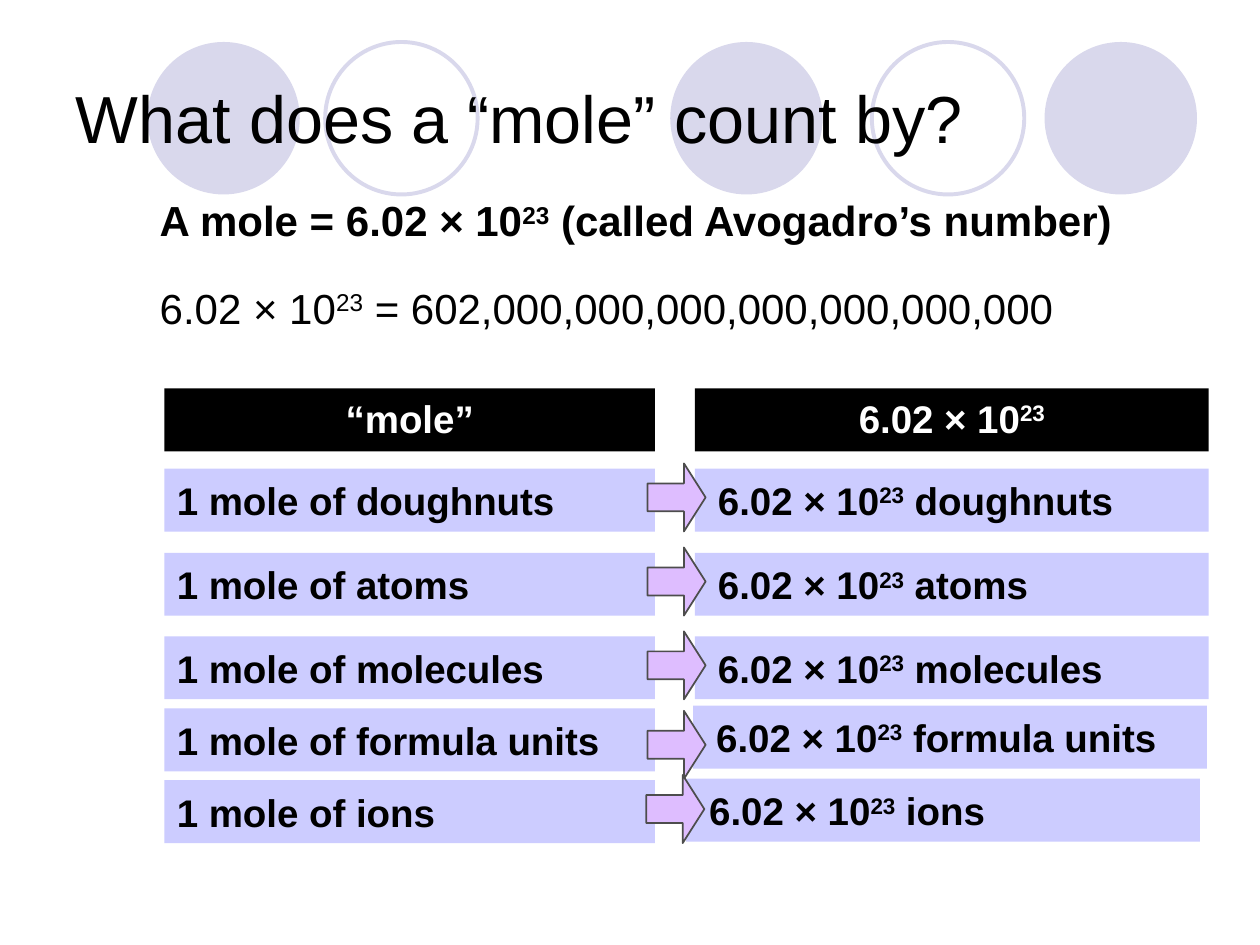
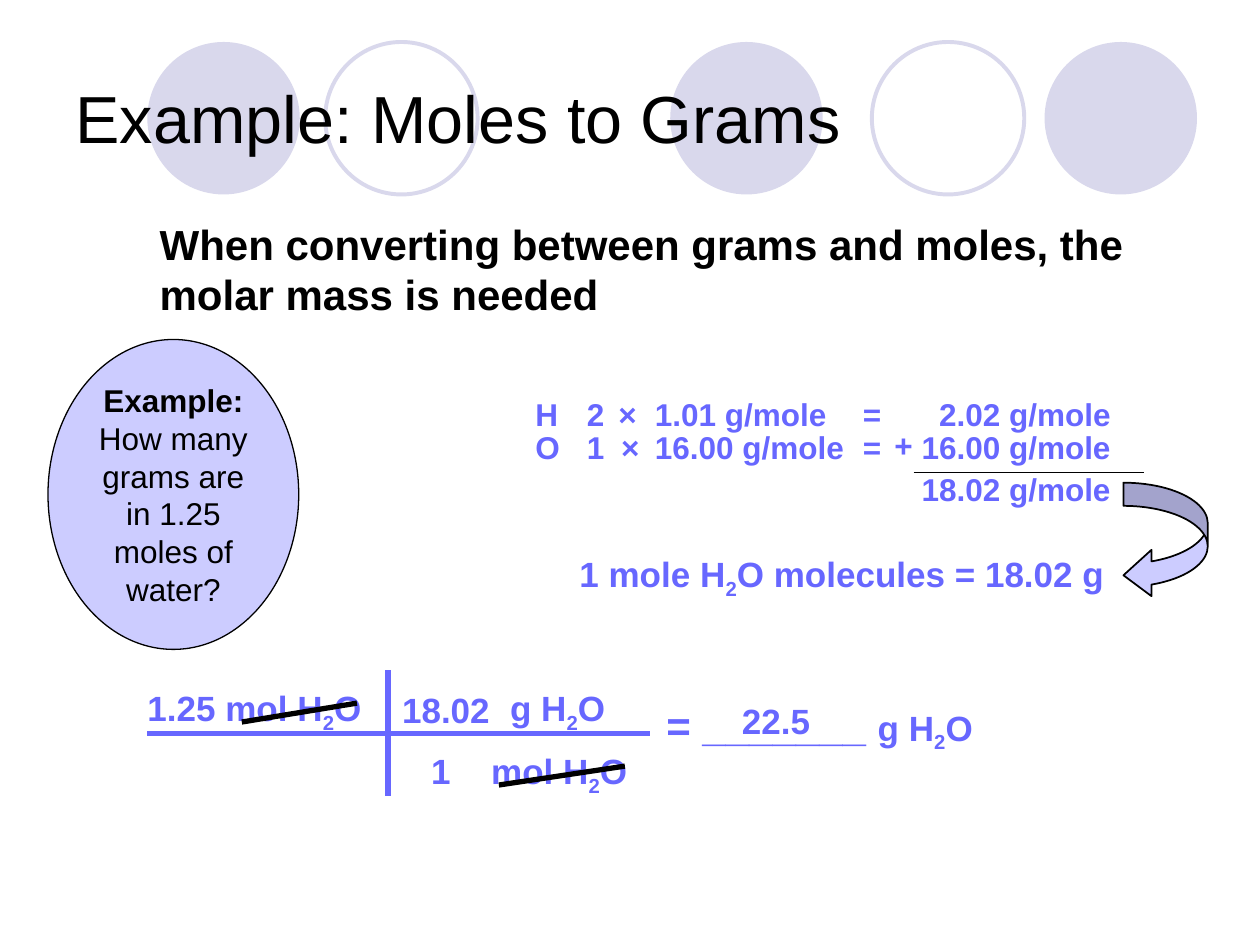
from lxml import etree
from pptx import Presentation
from pptx.dml.color import RGBColor
from pptx.enum.shapes import MSO_CONNECTOR, MSO_SHAPE as SHAPE
from pptx.enum.text import MSO_ANCHOR as ANCHOR, MSO_AUTO_SIZE as FIT, PP_ALIGN as ALIGN
from pptx.oxml.ns import qn
from pptx.util import Pt

FONT = "Arial"
BLACK, WHITE = "000000", "FFFFFF"
CIRCLE, LILAC, PINK, GREY, VIOLET = "D9D8EC", "CCCCFF", "DEBDFF", "4D4D4D", "6767FF"

# Superscript and subscript pieces
EXP = ("23", {"baseline": 30})
TWO = ("2", {"baseline": -25})
AVOGADRO = ["6.02 × 10", EXP]
WATER = ["H", TWO, "O"]


def rgb(hex_color):
    return RGBColor.from_string(hex_color)


def write(p, pieces, size, color=BLACK, bold=False, align=ALIGN.LEFT):
    """Fill a paragraph; a piece is a string or a (string, overrides) pair."""
    p.alignment = align
    for piece in pieces:
        text, extra = (piece, {}) if isinstance(piece, str) else piece
        r = p.add_run()
        r.text = text
        fmt = {"name": FONT, "bold": bold, "size": Pt(extra.get("size", size))}
        for key, value in fmt.items():
            setattr(r.font, key, value)
        r.font.color.rgb = rgb(color)
        if "baseline" in extra:
            r._r.get_or_add_rPr().set("baseline", str(extra["baseline"] * 1000))


def format_frame(tf, **fmt):
    for key, value in fmt.items():
        setattr(tf, key, value)


def add_text(s, x, y, w, h, pieces, size, wrap=False, **fmt):
    tf = s.shapes.add_textbox(Pt(x), Pt(y), Pt(w), Pt(h)).text_frame
    format_frame(tf, word_wrap=wrap, auto_size=FIT.SHAPE_TO_FIT_TEXT)
    write(tf.paragraphs[0], pieces, size, **fmt)


def add_statement(s, y, h, pieces, bold=True):
    add_text(s, 84.2, y, 604, h, pieces, 24, wrap=True, bold=bold)


def add_violet(s, x, y, w, pieces, size=20, align=ALIGN.LEFT):
    add_text(s, x, y, w, size * 1.2 + 7.2, pieces, size,
             color=VIOLET, bold=True, align=align)


def add_shape(s, kind, x, y, w, h, fill=None, line=None, weight=1, adj=()):
    sp = s.shapes.add_shape(kind, Pt(x), Pt(y), Pt(w), Pt(h))
    sp.shadow.inherit = False
    if fill:
        sp.fill.solid()
        sp.fill.fore_color.rgb = rgb(fill)
    else:
        sp.fill.background()
    if line:
        sp.line.color.rgb = rgb(line)
        sp.line.width = Pt(weight)
    else:
        sp.line.fill.background()
    for i, value in enumerate(adj):
        sp.adjustments[i] = value
    return sp


def add_line(s, x1, y1, x2, y2, color, weight):
    line = s.shapes.add_connector(MSO_CONNECTOR.STRAIGHT, Pt(x1), Pt(y1), Pt(x2), Pt(y2))
    line.line.color.rgb = rgb(color)
    line.line.width = Pt(weight)
    etree.SubElement(line.element.spPr, qn("a:effectLst"))


def add_bar(s, x, y, w, pieces, fill=LILAC, color=BLACK,
            anchor=ANCHOR.MIDDLE, align=ALIGN.LEFT):
    tf = add_shape(s, SHAPE.RECTANGLE, x, y, w, 36, fill).text_frame
    format_frame(tf, vertical_anchor=anchor, word_wrap=True)
    write(tf.paragraphs[0], pieces, 22, color, True, align)


def new_slide(prs, title):
    """Title-only slide with the row of circles behind its title."""
    s = prs.slides.add_slide(prs.slide_layouts[5])
    for x in (383, 596.9, 84.2):
        add_shape(s, SHAPE.OVAL, x, 24, 87.1, 87.1, fill=CIRCLE)
    for x in (498.2, 185.8):
        add_shape(s, SHAPE.OVAL, x, 24, 87.1, 87.1, line=CIRCLE, weight=2.25)
    sp = s.shapes.title
    box = {"left": 36, "top": 21.6, "width": 648, "height": 90}
    for key, value in box.items():
        setattr(sp, key, Pt(value))
    format_frame(sp.text_frame, vertical_anchor=ANCHOR.MIDDLE, auto_size=FIT.NONE)
    write(sp.text_frame.paragraphs[0], [title], 38)
    s.shapes.element.append(sp.element)  # bring the title to the front
    return s


def mole_count_slide(prs):
    s = new_slide(prs, "What does a “mole” count by?")
    add_statement(s, 107.8, 36, ["A mole = ", *AVOGADRO, " (called Avogadro’s number)"])
    add_statement(s, 157.7, 36, [*AVOGADRO, " = 602,000,000,000,000,000,000,000"], bold=False)

    # Column heads
    left_x, left_w, right_x, right_w = 94, 280.3, 397.1, 293.6
    head = {"fill": BLACK, "color": WHITE, "anchor": ANCHOR.TOP, "align": ALIGN.CENTER}
    add_bar(s, left_x, 222, left_w, ["“mole”"], **head)
    add_bar(s, right_x, 222, right_w, AVOGADRO, **head)

    # Rows: item, left top, right top, right shift, arrow left, arrow top
    rows = [("doughnuts", 267.8, 267.8, 0, 370, 264.8),
            ("atoms", 315.9, 315.9, 0, 370, 312.9),
            ("molecules", 363.6, 363.6, 0, 370, 360.8),
            ("formula units", 404.8, 403.2, -1, 370, 406.2),
            ("ions", 445.8, 445, -5, 369.3, 442.9)]
    for item, left_y, right_y, shift, arrow_x, arrow_y in rows:
        add_bar(s, left_x, left_y, left_w, [f"1 mole of {item}"])
        add_bar(s, right_x + shift, right_y, right_w, [" 6.02 × 10", EXP, f" {item}"])
        add_shape(s, SHAPE.RIGHT_ARROW, arrow_x, arrow_y, 33.2, 38.9, PINK, GREY,
                  adj=(0.411, 0.373))


def add_molar_mass(s):
    # Each row: top, then cells of left, width, text
    rows = [(222, [(298.8, 27.4, "H"), (328.3, 24.5, "2"), (346.3, 24.5, "×"),
                   (367.2, 112.3, "1.01 g/mole"), (486, 25.2, "=")]),
            (241.2, [(298.8, 28.8, "O"), (328.3, 24.5, "1"), (347.8, 24.5, "×"),
                     (367.2, 122.4, "16.00 g/mole"), (486, 25.2, "="),
                     (504, 25.2, "+")])]
    for y, cells in rows:
        for x, w, text in cells:
            add_violet(s, x, y - 1.4 if text == "+" else y, w, [text], 18)
    for y, mass in ((222, "2.02"), (241.2, "16.00"), (265, "18.02")):
        add_violet(s, 519.4, y, 122.4, [f"{mass} g/mole"], 18, ALIGN.RIGHT)
    add_line(s, 522, 270, 653.8, 270, BLACK, 1)


def add_conversion(s):
    # Fraction bars
    add_line(s, 84.2, 419, 371.5, 419, VIOLET, 3)
    add_line(s, 221.8, 383, 221.8, 455, VIOLET, 3)
    # Quantities and result
    blank = ("= _______ ", {"size": 24})
    for x, y, w, pieces in [(77.2, 388.8, 136.8, ["1.25 mol ", *WATER]),
                            (222.7, 390, 64.8, ["18.02"]),
                            (284.4, 388.8, 69.8, ["g ", *WATER]),
                            (239.3, 424.8, 25.9, ["1"]),
                            (273.6, 424.8, 92.9, ["mol ", *WATER]),
                            (373.7, 396, 190, [blank, "g ", *WATER]),
                            (416.9, 396, 54, ["22.5"])]:
        add_violet(s, x, y, w, pieces)
    # Cancelled units
    for x, y, length in ((138.2, 412.6, 65.8), (285.1, 448.6, 72)):
        add_line(s, x, y, x + length, y - 10.8, BLACK, 3)


def moles_to_grams_slide(prs):
    s = new_slide(prs, "Example: Moles to Grams")
    add_statement(s, 121.2, 64.8,
                  ["When converting between grams and moles, the molar mass is needed"])
    add_conversion(s)
    add_violet(s, 324, 312, 325, ["1 mole ", *WATER, " molecules = 18.02 g"])
    add_molar_mass(s)
    add_shape(s, SHAPE.CURVED_LEFT_ARROW, 642, 275.8, 48.2, 66.2, LILAC, BLACK,
              adj=(0.275, 0.55, 0.333))

    # Question bubble
    tf = add_shape(s, SHAPE.OVAL, 27.4, 194, 143.3, 177.1, LILAC, BLACK, 0.75).text_frame
    format_frame(tf, vertical_anchor=ANCHOR.MIDDLE, word_wrap=True)
    write(tf.paragraphs[0], ["Example:"], 18, bold=True, align=ALIGN.CENTER)
    write(tf.add_paragraph(), ["How many grams are in 1.25 moles of water?"], 18,
          align=ALIGN.CENTER)


def main():
    prs = Presentation()
    prs.slide_width, prs.slide_height = Pt(720), Pt(540)
    mole_count_slide(prs)
    moles_to_grams_slide(prs)
    prs.save("out.pptx")


if __name__ == "__main__":
    main()
